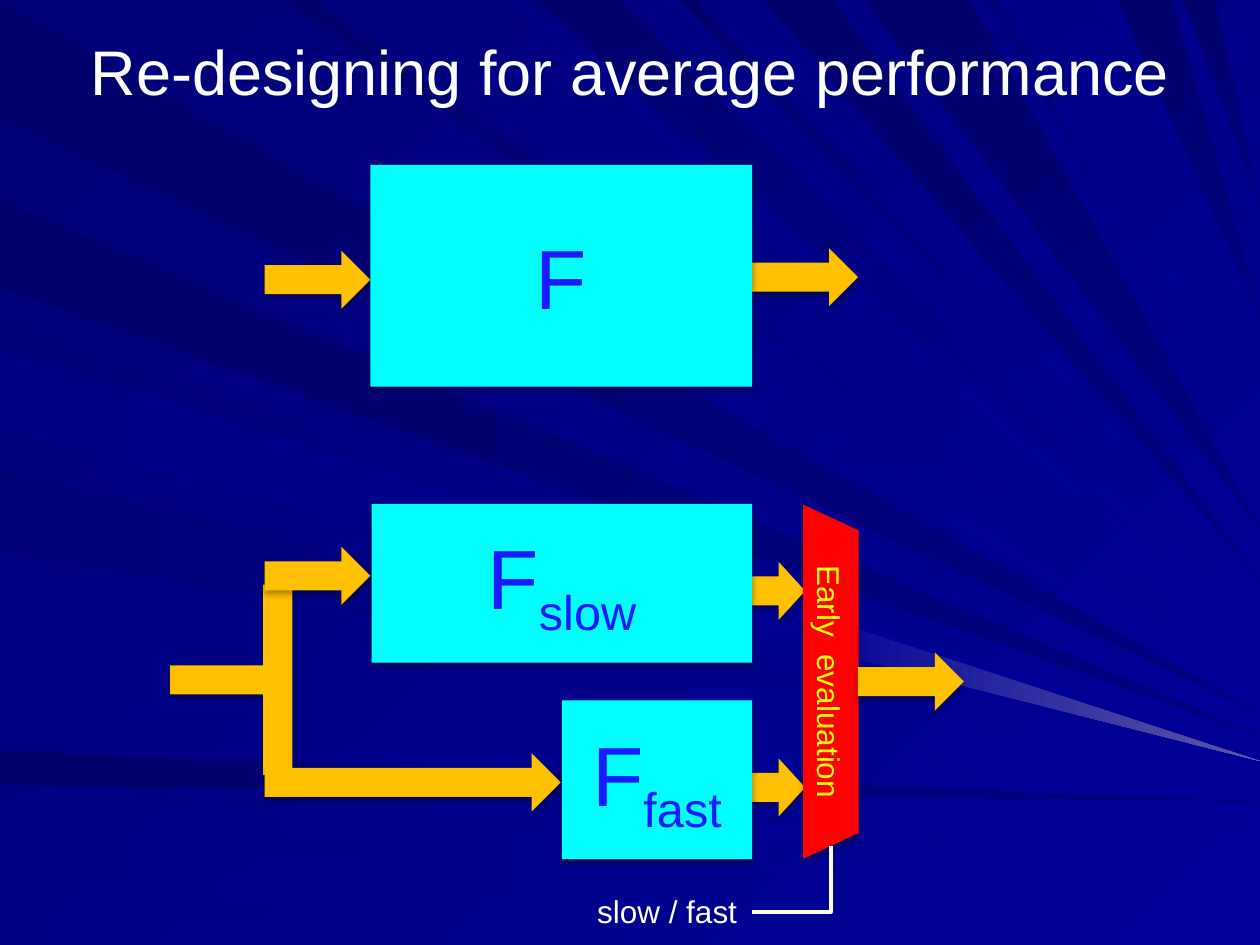
from lxml.etree import SubElement
from pptx import Presentation
from pptx.dml.color import RGBColor
from pptx.enum.shapes import MSO_CONNECTOR, MSO_SHAPE
from pptx.enum.text import MSO_ANCHOR, MSO_AUTO_SIZE, PP_ALIGN
from pptx.oxml.ns import qn
from pptx.util import Inches, Pt

FONT = "Arial"
COLORS = {
    "white": "FFFFFF",
    "arrow": "FFC000",
    "block": "00FFFF",
    "block_text": "1A1AFF",
    "mux": "FF0000",
    "mux_text": "FFFF00",
    "shadow": "000000",
    "back_start": "000078",
    "ray_dark": "00006D",
    "ray_middle": "000078",
    "ray_light": "000085",
    "ray_dim_end": "000080",
    "ray_end": "000099",
    "glint": "5A5AA6",
}
SLIDE_WIDTH, SLIDE_HEIGHT = 10, 7.5
VANISHING_X, VANISHING_Y = 11.43, 6.4
ARROW_LENGTH, ARROW_HEIGHT = 0.84, 0.46
LEFT_RAYS = [
    (0.02, 0.93, "ray_dark", "ray_dim_end"),
    (5.96, 6.23, "ray_dark", "ray_dim_end"),
    (6.65, 7.04, "ray_light", "ray_end"),
    (7.35, 7.5, "ray_light", "ray_end"),
    (2.58, 2.7, "ray_middle", "ray_end"),
    (1.59, 2.28, "ray_dark", "ray_dim_end"),
    (2.78, 3.42, "ray_light", "ray_end"),
    (3.74, 4.37, "ray_middle", "ray_end"),
    (5.52, 5.6, "ray_light", "ray_end"),
]
TOP_RAYS = [
    (0.26, 1.01, "ray_middle", "ray_end"),
    (2.25, 2.47, "ray_dark", "ray_end"),
    (3.98, 4.16, "ray_light", "ray_end"),
    (4.26, 4.92, "ray_dark", "ray_end"),
    (5.4, 5.52, "ray_dark", "ray_end"),
    (5.77, 5.88, "ray_light", "ray_end"),
    (6.06, 6.61, "ray_dark", "ray_dim_end"),
    (6.86, 7.7, "ray_dark", "ray_dim_end"),
    (7.85, 7.92, "ray_middle", "ray_end"),
    (8.15, 8.24, "ray_light", "ray_end"),
    (8.65, 8.72, "ray_light", "ray_end"),
    (8.87, 9.3, "ray_dark", "ray_dim_end"),
    (9.39, 9.64, "ray_dark", "ray_dim_end"),
]


def paint_gradient(fill, start, end, clockwise_angle):
    """Fill with a two-colour linear gradient."""
    fill.gradient()
    fill.gradient_angle = (360 - clockwise_angle) % 360
    for stop, color in zip(fill.gradient_stops, (start, end)):
        stop.color.rgb = RGBColor.from_string(COLORS[color])


def style_run(run, size, color):
    """Set the font, size and colour of a run."""
    run.font.name = FONT
    run.font.size = Pt(size)
    run.font.color.rgb = RGBColor.from_string(COLORS[color])


def add_solid(shapes, kind, box, color, rotation=0, adjustments=()):
    """Add a borderless preset shape with a soft shadow below it."""
    solid = shapes.add_shape(kind, *map(Inches, box))
    solid.rotation = rotation
    for index, value in enumerate(adjustments):
        solid.adjustments[index] = value
    solid.fill.solid()
    solid.fill.fore_color.rgb = RGBColor.from_string(COLORS[color])
    solid.line.fill.background()
    solid.shadow.inherit = False
    effects = solid._element.spPr.find(qn("a:effectLst"))
    shadow = SubElement(effects, qn("a:outerShdw"), blurRad=str(Pt(3.5)), dist=str(Pt(2.2)),
                        dir="5400000", rotWithShape="0")
    shade = SubElement(shadow, qn("a:srgbClr"), val=COLORS["shadow"])
    SubElement(shade, qn("a:alpha"), val="32000")
    return solid


def add_arrow(shapes, left, top, length=ARROW_LENGTH):
    """Add a data arrow pointing right."""
    add_solid(shapes, MSO_SHAPE.RIGHT_ARROW, (left, top, length, ARROW_HEIGHT), "arrow")


def add_label(shape, label, size, color, subscript=""):
    """Write a centred one-line label with an optional subscript."""
    frame = shape.text_frame
    frame.word_wrap = False
    frame.vertical_anchor = MSO_ANCHOR.MIDDLE
    paragraph = frame.paragraphs[0]
    paragraph.alignment = PP_ALIGN.CENTER
    paragraph.text = label
    if subscript:
        lowered = paragraph.add_run()
        lowered.text = subscript
        lowered.font._element.set("baseline", "-25000")
    for run in paragraph.runs:
        style_run(run, size, color)


def add_block(shapes, box, subscript=""):
    """Add a function block F."""
    block = add_solid(shapes, MSO_SHAPE.RECTANGLE, box, "block")
    add_label(block, "F", 48, "block_text", subscript)


def add_ray(shapes, first, second, tip, start, end, angle):
    """Add a triangular light ray."""
    points = [(Inches(x), Inches(y)) for x, y in (first, second, tip)]
    builder = shapes.build_freeform(*points[0])
    builder.add_line_segments(points[1:], close=True)
    ray = builder.convert_to_shape()
    paint_gradient(ray.fill, start, end, angle)
    ray.line.fill.background()
    ray.shadow.inherit = False


def find_tip(x, y):
    """Return where the line to the vanishing point meets the right edge."""
    share = (SLIDE_WIDTH - x) / (VANISHING_X - x)
    return SLIDE_WIDTH, y + share * (VANISHING_Y - y)


def draw_background(slide):
    """Paint the gradient and the light rays."""
    paint_gradient(slide.background.fill, "back_start", "ray_end", 45)
    rays = slide.shapes.add_group_shape().shapes
    for near, far, start, end in LEFT_RAYS:
        add_ray(rays, (0, near), (0, far), find_tip(0, (near + far) / 2), start, end, 0)
    for near, far, start, end in TOP_RAYS:
        add_ray(rays, (near, 0), (far, 0), find_tip((near + far) / 2, 0), start, end, 45)
    add_ray(rays, (6.37, 4.85), (6.33, 5.11), (SLIDE_WIDTH, 6.04), "ray_end", "glint", 0)


def draw_title(slide, box):
    """Place the title in front of the rays."""
    title = slide.shapes.title
    title.left, title.top, title.width, title.height = map(Inches, box)
    add_label(title, "Re-designing for average performance", 36, "white")
    slide.shapes._spTree.append(title._element)


def draw_single(shapes, left, top, width, height):
    """Draw the single block with its input and output."""
    add_arrow(shapes, left + width - ARROW_LENGTH, top + 0.66)
    add_arrow(shapes, left, top + 0.68)
    add_block(shapes, (left + ARROW_LENGTH, top, width - 2 * ARROW_LENGTH, height))


def draw_select(shapes, left, top):
    """Draw the select signal and its bent line."""
    select = shapes.add_connector(MSO_CONNECTOR.ELBOW, Inches(left + 1.38), Inches(top - 0.37),
                                  Inches(left + 1.9), Inches(top + 0.26))
    properties = select._element.spPr
    properties.find(qn("a:xfrm")).set("rot", "5400000")
    properties.find(qn("a:prstGeom")).set("prst", "bentConnector2")
    select.line.color.rgb = RGBColor.from_string(COLORS["white"])
    select.line.width = Pt(2.25)
    SubElement(properties, qn("a:effectLst"))
    caption = shapes.add_textbox(*map(Inches, (left, top, 1.32, 0.4))).text_frame
    caption.word_wrap = False
    caption.auto_size = MSO_AUTO_SIZE.SHAPE_TO_FIT_TEXT
    caption.text = "slow / fast"
    style_run(caption.paragraphs[0].runs[0], 18, "white")


def draw_split(shapes, left, top, width, height):
    """Draw the slow and fast blocks joined by early evaluation."""
    branch, blocks_right = left + 0.75, left + 4.62
    block_height, fast_top = 1.26, top + 1.56
    add_solid(shapes, MSO_SHAPE.LEFT_RIGHT_UP_ARROW, (left - 0.27, top + 0.91, 1.51, 0.97), "arrow",
              270, (0.25, 0.119, 0))
    for block_top in (top, fast_top):
        add_arrow(shapes, blocks_right, block_top + 0.46, ARROW_LENGTH / 2)
    mux = add_solid(shapes, MSO_SHAPE.TRAPEZOID, (left + 3.84, top + 1.19, 2.81, 0.44), "mux", 90, (0.465,))
    add_label(mux, "Early  evaluation", 18, "mux_text")
    add_arrow(shapes, left + width - ARROW_LENGTH, top + 1.18)
    add_arrow(shapes, branch, top + 0.34)
    add_arrow(shapes, branch, top + 1.98, 2.35)
    draw_select(shapes, left + 3.29, top + height - 0.4)
    for block_top, block_width, speed in ((top, 3.02, "slow"), (fast_top, 1.51, "fast")):
        add_block(shapes, (blocks_right - block_width, block_top, block_width, block_height), speed)


def main():
    """Build and save the slide."""
    deck = Presentation()
    deck.slide_width, deck.slide_height = Inches(SLIDE_WIDTH), Inches(SLIDE_HEIGHT)
    slide = deck.slides.add_slide(deck.slide_layouts[5])
    draw_background(slide)
    draw_title(slide, (0.5, -0.07, 9, 1.25))
    draw_single(slide.shapes, 2.1, 1.31, 4.71, 1.76)
    draw_split(slide.shapes, 1.35, 4, 6.3, 3.43)
    deck.save("out.pptx")


if __name__ == "__main__":
    main()
